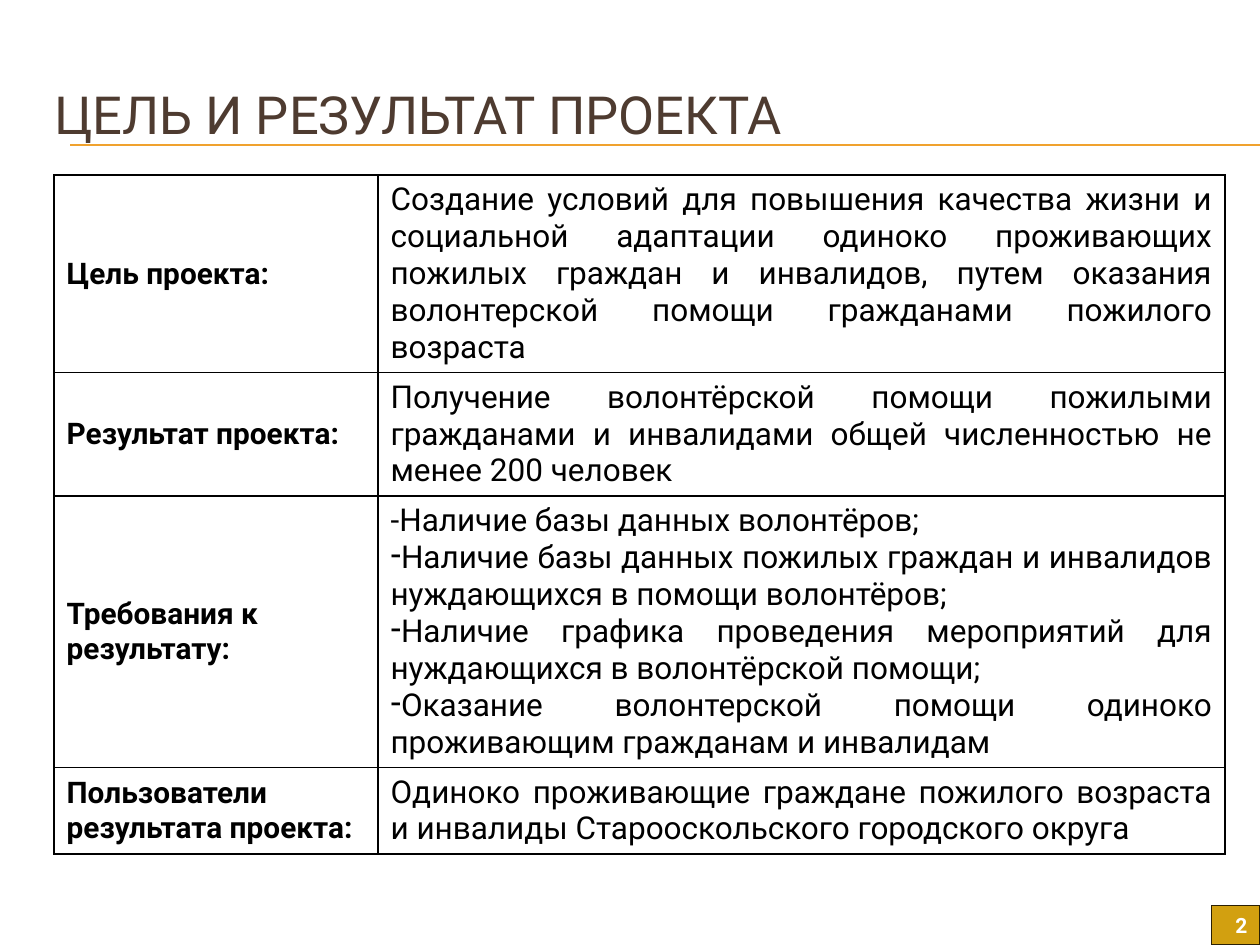
from lxml.etree import SubElement
from pptx import Presentation
from pptx.dml.color import RGBColor
from pptx.enum.shapes import MSO_CONNECTOR, MSO_SHAPE
from pptx.enum.text import MSO_ANCHOR, PP_ALIGN
from pptx.oxml.ns import qn
from pptx.util import Cm, Pt

FONT = "Roboto"
COLORS = {
    "title": "4E3B30",
    "rule": "F0A22E",
    "badge": "D2A010",
    "badge_line": "2A2003",
    "text": "000000",
    "white": "FFFFFF",
}
COLUMN_WIDTHS = (6.53, 17.07)
# label, paragraphs, row height in cm
ROWS = [
    ("Цель проекта:",
     ["Создание условий для повышения качества жизни и социальной адаптации "
      "одиноко проживающих пожилых граждан и инвалидов, путем оказания "
      "волонтерской помощи гражданами пожилого возраста"], 3.97),
    ("Результат проекта:",
     ["Получение волонтёрской помощи пожилыми гражданами и инвалидами общей "
      "численностью не менее 200 человек"], 2.49),
    ("Требования к результату:",
     ["-Наличие базы данных волонтёров;",
      "Наличие базы данных пожилых граждан и инвалидов нуждающихся в помощи "
      "волонтёров;",
      "Наличие графика проведения мероприятий для нуждающихся в волонтёрской "
      "помощи;",
      "Оказание волонтерской помощи одиноко проживающим гражданам и "
      "инвалидам"], 5.47),
    ("Пользователи результата проекта:",
     ["Одиноко проживающие граждане пожилого возраста и инвалиды "
      "Старооскольского городского округа"], 1.75),
]


def color(name):
    return RGBColor.from_string(COLORS[name])


def style_paragraph(paragraph, size, color_name, bold=False, align=PP_ALIGN.LEFT):
    paragraph.alignment = align
    font = paragraph.font
    font.name, font.size, font.bold = FONT, Pt(size), bold
    font.color.rgb = color(color_name)


def add_rule(slide, y):
    rule = slide.shapes.add_connector(
        MSO_CONNECTOR.STRAIGHT, Cm(1.42), Cm(y), Cm(25.4), Cm(y))
    rule.line.color.rgb = color("rule")
    rule.line.width = Pt(0.75)
    SubElement(rule._element.spPr, qn("a:effectLst"))


def set_title(slide, text):
    title = slide.shapes.title
    title.left, title.top, title.width, title.height = (
        Cm(0.84), Cm(1.12), Cm(24.13), Cm(2.34))
    title.text_frame.text = text
    title.text_frame.vertical_anchor = MSO_ANCHOR.MIDDLE
    style_paragraph(title.text_frame.paragraphs[0], 30, "title")


def add_page_badge(slide, number):
    badge = slide.shapes.add_shape(
        MSO_SHAPE.RECTANGLE, Cm(24.43), Cm(18.26), Cm(0.97), Cm(0.79))
    badge.shadow.inherit = False
    badge.fill.solid()
    badge.fill.fore_color.rgb = color("badge")
    badge.line.color.rgb = color("badge_line")
    badge.line.width = Pt(0.75)
    badge.text_frame.text = number
    style_paragraph(badge.text_frame.paragraphs[0], 12, "white", True, PP_ALIGN.RIGHT)


def outline_cell(cell):
    """Give the cell four thin borders and no fill."""
    properties = cell._tc.get_or_add_tcPr()
    for side in ("lnL", "lnR", "lnT", "lnB"):
        border = SubElement(properties, qn(f"a:{side}"), w=str(Pt(1)))
        fill = SubElement(border, qn("a:solidFill"))
        SubElement(fill, qn("a:srgbClr"), val=COLORS["text"])
    cell.fill.background()
    cell.vertical_anchor = MSO_ANCHOR.MIDDLE


def set_dash_bullet(paragraph):
    SubElement(paragraph._p.get_or_add_pPr(), qn("a:buChar"), char="-")


def fill_description(cell, texts):
    cell.text = "\n".join(texts)
    for index, paragraph in enumerate(cell.text_frame.paragraphs):
        paragraph.level = 1
        properties = paragraph._p.get_or_add_pPr()
        properties.set("marL", "0")
        properties.set("indent", "0")
        if index:
            set_dash_bullet(paragraph)
        style_paragraph(paragraph, 18, "text", align=PP_ALIGN.JUSTIFY)


def add_goal_table(slide):
    table = slide.shapes.add_table(
        len(ROWS), len(COLUMN_WIDTHS), Cm(1.09), Cm(3.53),
        Cm(sum(COLUMN_WIDTHS)), Cm(sum(height for *_, height in ROWS))).table
    table.first_row = table.horz_banding = False
    for column, width in zip(table.columns, COLUMN_WIDTHS):
        column.width = Cm(width)
    for row, (label, texts, height) in zip(table.rows, ROWS):
        row.height = Cm(height)
        label_cell, description_cell = row.cells
        label_cell.text = label
        style_paragraph(label_cell.text_frame.paragraphs[0], 17, "text", True)
        fill_description(description_cell, texts)
        for cell in row.cells:
            outline_cell(cell)


def main():
    presentation = Presentation()
    presentation.slide_width, presentation.slide_height = Cm(25.4), Cm(19.05)
    slide = presentation.slides.add_slide(presentation.slide_layouts[5])
    for y in (2.92, 2.94):
        add_rule(slide, y)
    set_title(slide, "ЦЕЛЬ И РЕЗУЛЬТАТ ПРОЕКТА")
    add_page_badge(slide, "2")
    add_goal_table(slide)
    presentation.save("out.pptx")


if __name__ == "__main__":
    main()
